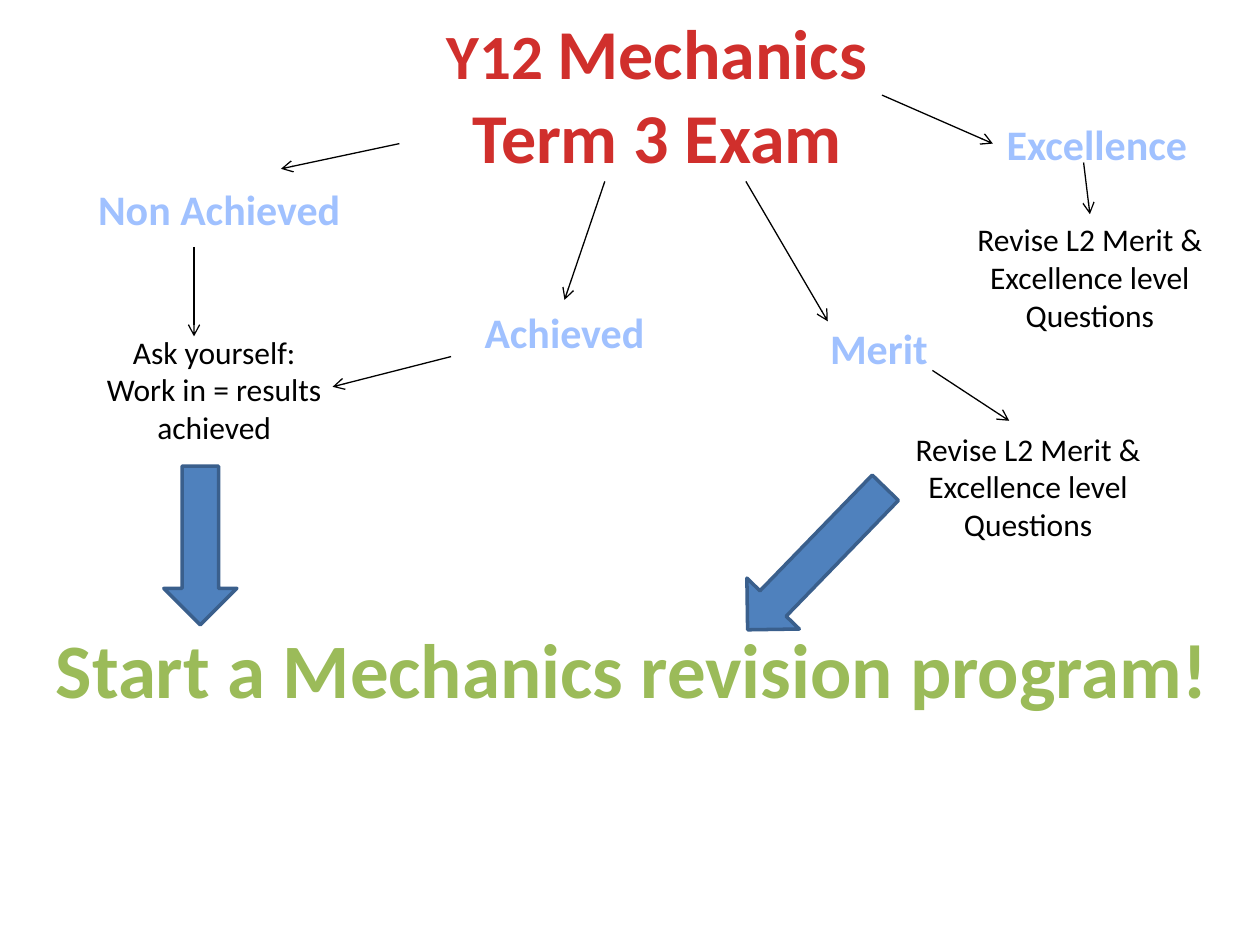
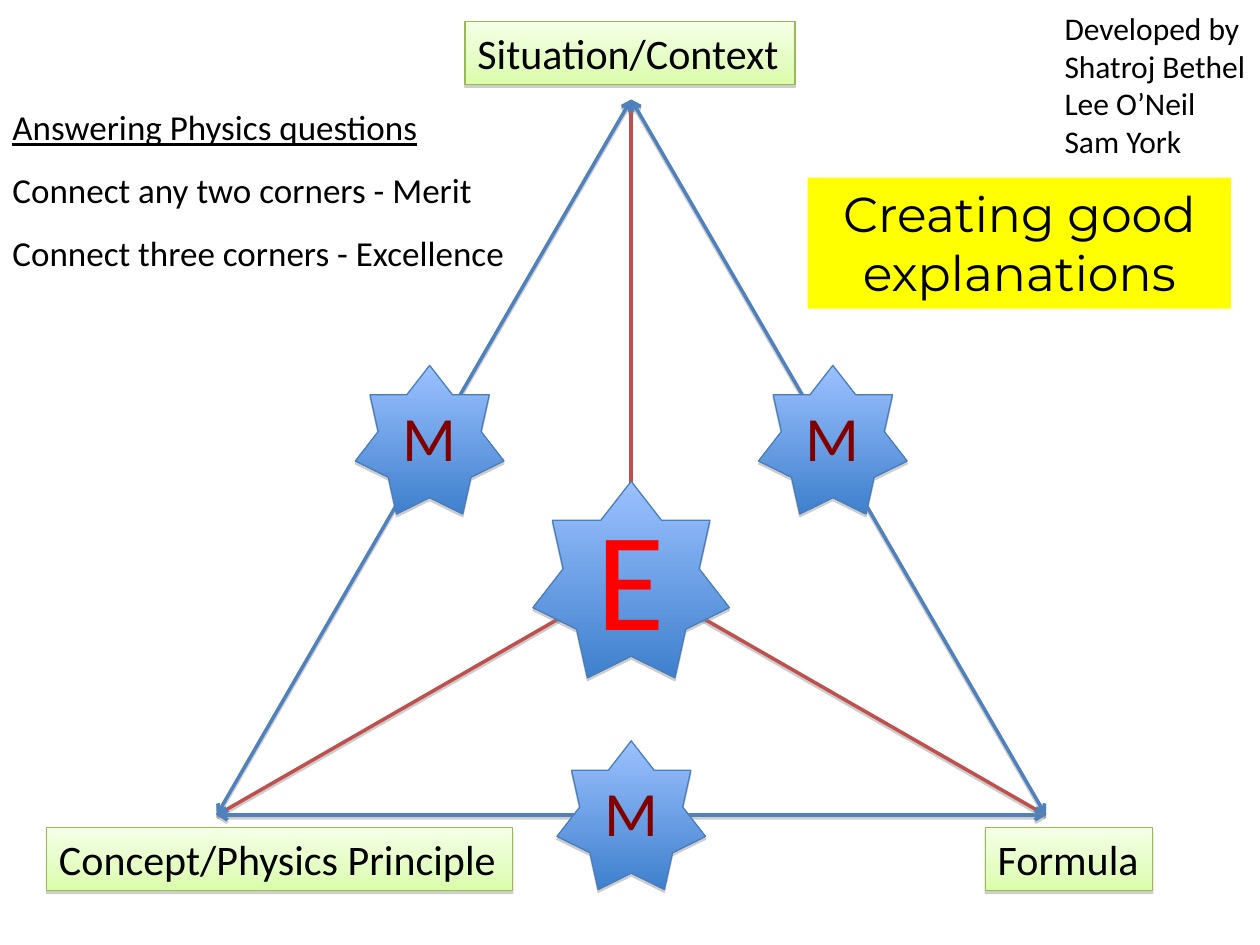
from lxml import etree
from pptx import Presentation
from pptx.dml.color import RGBColor
from pptx.enum.shapes import MSO_CONNECTOR, MSO_SHAPE
from pptx.enum.text import MSO_ANCHOR, PP_ALIGN
from pptx.util import Inches, Pt

RECT, STAR, DOWN = MSO_SHAPE.RECTANGLE, MSO_SHAPE.STAR_7_POINT, MSO_SHAPE.DOWN_ARROW
STRAIGHT = MSO_CONNECTOR.STRAIGHT
LEFT, MID = PP_ALIGN.LEFT, PP_ALIGN.CENTER
TOP, CENTRE = MSO_ANCHOR.TOP, MSO_ANCHOR.MIDDLE
color = RGBColor.from_string

BLACK, BLUE, RED, GREEN = "000000", "4F81BD", "C0504D", "9BBB59"
NS = 'xmlns:a="http://schemas.openxmlformats.org/drawingml/2006/main"'
PLAIN = f"<a:effectLst {NS}/>"
SHADE = (f'<a:effectLst {NS}><a:outerShdw dist="20320" dir="5400000" rotWithShape="0">'
         '<a:srgbClr val="808080"><a:alpha val="38000"/></a:srgbClr>'
         "</a:outerShdw></a:effectLst>")
LIME = [(0, "F5FFE6"), (65, "E4FDC2"), (100, "DAFDA7")]
SKY = [(0, "9BC1FF"), (100, "3F80CD")]


def write(shape, paras, size, ink=BLACK, align=MID, bold=False,
          wrap=False, font="Calibri", anchor=TOP, after=0):
    """Fill a shape with paragraphs, each one a list of runs."""
    frame = shape.text_frame
    frame.word_wrap, frame.vertical_anchor = wrap, anchor
    for i, runs in enumerate(paras):
        para = frame.paragraphs[0] if i == 0 else frame.add_paragraph()
        para.alignment, para.space_after = align, Pt(after)
        for text in runs:
            run = para.add_run()
            run.text = text
            run.font.name, run.font.size, run.font.bold = font, Pt(size), bold
            run.font.color.rgb = color(ink)
    return shape


def draw(slide, start, end, ink, width, heads, effect):
    """Draw a straight line with open arrowheads at the named ends."""
    line = slide.shapes.add_connector(STRAIGHT, *map(Inches, start + end))
    line.line.color.rgb = color(ink)
    line.line.width = Pt(width)
    props = line._element.spPr
    for head in heads:
        props.find("{*}ln").append(etree.fromstring(f'<a:{head} {NS} type="arrow"/>'))
    props.append(etree.fromstring(effect))
    return line


deck = Presentation()
deck.slide_width, deck.slide_height = Inches(10), Inches(7.5)
blank = deck.slide_layouts[6]

# Slide 1: exam results and next steps
plan = deck.slides.add_slide(blank)
box = plan.shapes.add_textbox

title = write(box(*map(Inches, (3.43, 0.03, 3.57, 1.45))),
              [["Y12 ", "Mechanics"], ["Term 3 Exam"]], 40, "D02F2C", bold=True)
title.text_frame.paragraphs[0].runs[0].font.size = Pt(36)

# Grades
grades = {}
for name, x, y, w in [("Non Achieved", 0.67, 1.41, 2.14), ("Achieved", 3.74, 2.38, 1.48),
                      ("Merit", 6.48, 2.51, 0.99), ("Excellence", 7.88, 0.89, 1.65)]:
    grades[name] = write(box(*map(Inches, (x, y, w, 0.5))), [[name]], 24, "A0C1FF", bold=True)

# Advice
revise = [["Revise L2 Merit & Excellence level Questions"]]
ask = [["Ask yourself:"], ["Work in = results achieved"]]
notes = [write(box(*map(Inches, (x, y, w, 1.01))), paras, 18, wrap=True)
         for x, y, w, paras in [(0.35, 2.59, 2.7, ask), (6.98, 3.36, 2.36, revise),
                                (7.47, 1.7, 2.36, revise)]]
write(box(*map(Inches, (0.28, 4.88, 9.48, 0.84))),
      [["Start a Mechanics revision program!"]], 44, GREEN, bold=True)

# Thin arrows, with the shape and side they leave from or reach
for start, end, source, goal in [
    ((7, 0.75), (7.88, 1.14), (title, 3), (grades["Excellence"], 1)),
    ((8.6, 1.29), (8.65, 1.7), None, (notes[2], 0)),
    ((7.4, 2.94), (8.01, 3.34), None, None),
    ((5.92, 1.44), (6.57, 2.55), None, None),
    ((4.8, 1.44), (4.49, 2.38), None, (grades["Achieved"], 0)),
    ((3.17, 1.14), (2.23, 1.34), None, None),
    ((1.54, 1.96), (1.54, 2.67), None, None),
    ((3.58, 2.83), (2.64, 3.07), None, None),
]:
    line = draw(plan, start, end, BLACK, 0.75, ["tailEnd"], PLAIN)
    if source:
        line.begin_connect(*source)
    if goal:
        line.end_connect(*goal)

# Block arrows
for x, y, h, turn in [(1.3, 3.7, 1.26, 0), (6.19, 3.65, 1.57, 44.1)]:
    arrow = plan.shapes.add_shape(DOWN, *map(Inches, (x, y, 0.58, h)))
    arrow.rotation = turn
    arrow.shadow.inherit = False
    arrow.fill.solid()
    arrow.fill.fore_color.rgb = color(BLUE)
    arrow.line.color.rgb = color("3A5F8C")
    arrow.line.width = Pt(2)

# Slide 2: explanation triangle
guide = deck.slides.add_slide(blank)
box = guide.shapes.add_textbox

# Spokes and sides
peak, west, east, hub = (5.01, 0.79), (1.72, 6.47), (8.3, 6.47), (5.01, 4.58)
for corner in (peak, west, east):
    draw(guide, corner, hub, RED, 2, [], SHADE)
for start, end in [(west, peak), (east, west), (east, peak)]:
    draw(guide, start, end, BLUE, 2, ["headEnd", "tailEnd"], SHADE)

# Corner labels and stars
labels = [(RECT, x, y, w, 0.5, text, 24, BLACK, LIME, "98B954")
          for x, y, w, text in [(3.69, 0.17, 2.62, "Situation/Context"),
                                (0.37, 6.57, 3.7, "Concept/Physics Principle"),
                                (7.82, 6.57, 1.33, "Formula")]]
stars = [(STAR, x - d / 2, y - d / 2, d, d, text, size, ink, SKY, "4A7EBB")
         for x, y, d, text, size, ink in [(5.01, 4.6, 1.56, "E", 80, "FF0000"),
                                          (3.41, 3.49, 1.18, "M", 36, "800000"),
                                          (6.61, 3.49, 1.18, "M", 36, "800000"),
                                          (5.01, 6.47, 1.18, "M", 36, "800000")]]
for kind, x, y, w, h, text, size, ink, stops, edge in labels + stars:
    shape = guide.shapes.add_shape(kind, *map(Inches, (x, y, w, h)))
    shape.line.color.rgb = color(edge)
    shape.line.width = Pt(0.75)
    marks = "".join(f'<a:gs pos="{at * 1000}"><a:srgbClr val="{tone}"/></a:gs>'
                    for at, tone in stops)
    props = shape._element.spPr
    props.find("{*}prstGeom").addnext(etree.fromstring(
        f'<a:gradFill {NS} rotWithShape="1"><a:gsLst>{marks}</a:gsLst>'
        '<a:lin ang="5400000" scaled="0"/></a:gradFill>'))
    props.append(etree.fromstring(SHADE))
    write(shape, [[text]], size, ink, LEFT if kind == RECT else MID,
          anchor=TOP if kind == RECT else CENTRE)

# Credits
write(box(*map(Inches, (8.35, 0.02, 1.65, 1.31))),
      [["Developed by"], ["Shatroj Bethel"], ["Lee O’Neil"], ["Sam York"]], 18, align=LEFT)

# Rules for each grade
rules = write(box(*map(Inches, (0, 0.79, 4.23, 1.45))),
              [["Answering Physics questions"], ["Connect any two corners - Merit"],
               ["Connect three corners - Excellence"]], 20, align=LEFT, wrap=True, after=12)
rules.text_frame.paragraphs[0].runs[0].font.underline = True

# Heading
head = guide.shapes.add_shape(RECT, *map(Inches, (6.41, 1.41, 3.36, 1.04)))
head.shadow.inherit = False
head.fill.solid()
head.fill.fore_color.rgb = color("FFFF00")
head.line.fill.background()
write(head, [["Creating good explanations"]], 28, wrap=True, font="Montserrat")

deck.save("out.pptx")
